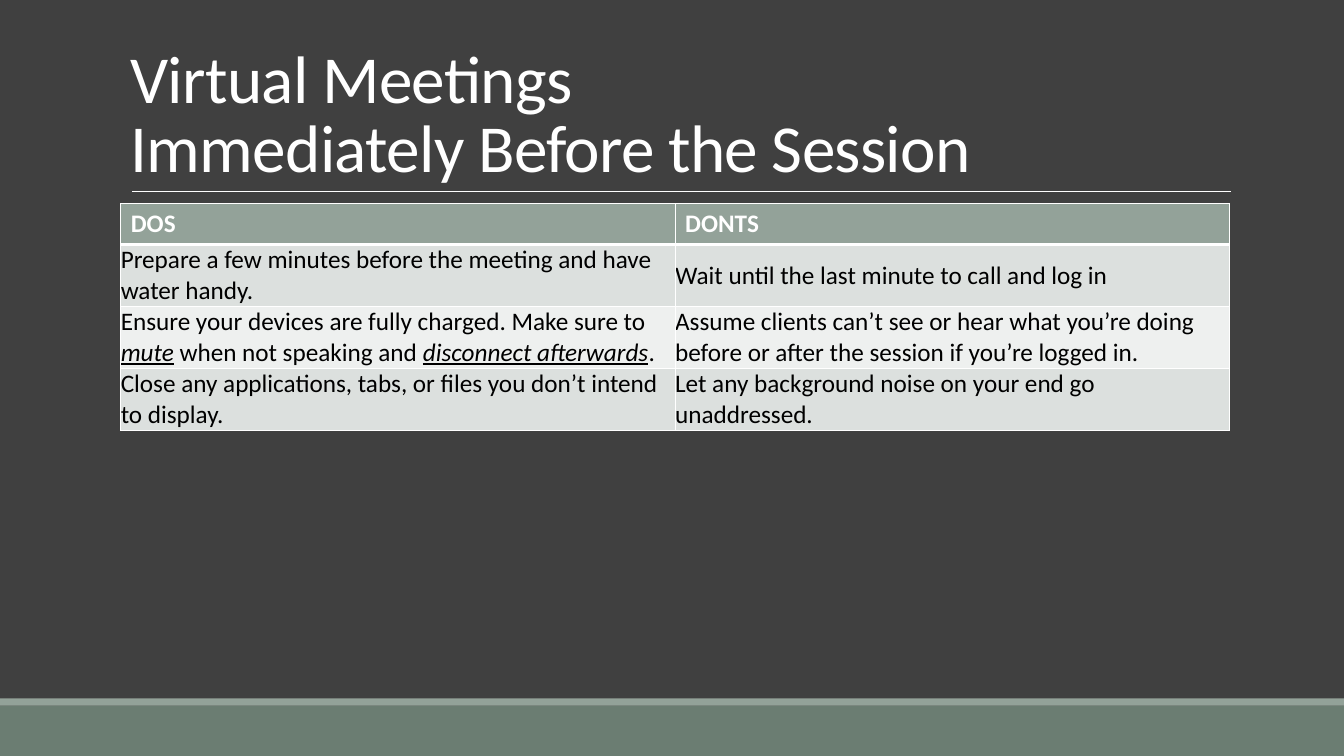
from lxml import etree
from pptx import Presentation
from pptx import util as u
from pptx.dml.color import RGBColor
from pptx.enum import shapes, text
from pptx.oxml import ns

PX = 9525  # EMU per px, 96 px to the inch
FONT = "Calibri"
CHARCOAL = RGBColor(0x40, 0x40, 0x40)
DARK_SAGE = RGBColor(0x6B, 0x7D, 0x72)
SAGE = RGBColor(0x93, 0xA2, 0x99)
BAND_DARK = RGBColor(0xDC, 0xE0, 0xDE)
BAND_LIGHT = RGBColor(0xEE, 0xF0, 0xEF)
WHITE = RGBColor(0xFF, 0xFF, 0xFF)
BLACK = RGBColor(0, 0, 0)

HEADER_HEIGHT, ROW_HEIGHT = 39, 59
# Words between underscores are italic and underlined
ADVICE = [
    ("DOS", "DONTS"),
    ("Prepare a few minutes before the meeting and have water handy.",
     "Wait until the last minute to call and log in"),
    ("Ensure your devices are fully charged. Make sure to _mute_ when not "
     "speaking and _disconnect afterwards_.",
     "Assume clients can’t see or hear what you’re doing before or after "
     "the session if you’re logged in."),
    ("Close any applications, tabs, or files you don’t intend to display.",
     "Let any background noise on your end go unaddressed."),
]


def emu(*lengths):
    return [u.Emu(length * PX) for length in lengths]


def style(run, size, color, bold=False):
    run.font.name = FONT
    run.font.size = u.Pt(size)
    run.font.color.rgb = color
    run.font.bold = bold


def add_footer(slide, left, top, width, height):
    """Dark band with a thin lighter strip along its top."""
    strip = 7
    for y, h, color in ((top + strip, height - strip, DARK_SAGE),
                        (top, strip, SAGE)):
        band = slide.shapes.add_shape(shapes.MSO_SHAPE.RECTANGLE,
                                      *emu(left, y, width, h))
        band.shadow.inherit = False
        band.fill.solid()
        band.fill.fore_color.rgb = color
        band.line.fill.background()


def add_title(slide, left, top, width, height):
    """Two-line heading with a rule under it."""
    inset = 11
    bottom = top + height
    rule = slide.shapes.add_connector(
        shapes.MSO_CONNECTOR.STRAIGHT,
        *emu(left + inset, bottom, left + width + 1, bottom))
    rule.line.color.rgb = WHITE
    rule.line.width = u.Pt(0.5)
    etree.SubElement(rule.element.spPr, ns.qn("a:effectLst"))

    heading = slide.shapes.add_textbox(*emu(left, top, width, height)).text_frame
    heading.word_wrap = True
    heading.vertical_anchor = text.MSO_ANCHOR.BOTTOM
    heading.text = "Virtual Meetings\vImmediately Before the Session"
    line = heading.paragraphs[0]
    line.line_spacing = 0.85
    for run in line.runs:
        style(run, 48, WHITE)
        run.font._element.set("spc", "-50")


def set_borders(cell, bottom_width):
    props = cell._tc.get_or_add_tcPr()
    sides = (("L", 1), ("R", 1), ("T", 1), ("B", bottom_width))
    for position, (side, width) in enumerate(sides):
        border = etree.Element(ns.qn(f"a:ln{side}"), w=str(u.Pt(width)))
        fill = etree.SubElement(border, ns.qn("a:solidFill"))
        etree.SubElement(fill, ns.qn("a:srgbClr"), val=str(WHITE))
        props.insert(position, border)


def fill_cell(cell, wording, row):
    is_header = row == 0
    cell.fill.solid()
    if is_header:
        cell.fill.fore_color.rgb = SAGE
    else:
        cell.fill.fore_color.rgb = BAND_DARK if row % 2 else BAND_LIGHT
        cell.vertical_anchor = text.MSO_ANCHOR.MIDDLE
        cell.margin_left = cell.margin_right = 0
        cell.margin_top = cell.margin_bottom = 0
    for index, part in enumerate(wording.split("_")):
        run = cell.text_frame.paragraphs[0].add_run()
        run.text = part
        style(run, 18, WHITE if is_header else BLACK, is_header)
        if index % 2:
            run.font.italic = run.font.underline = True
    set_borders(cell, 3 if is_header else 1)


def add_advice_table(slide, left, top, width):
    """Dos and don'ts side by side."""
    heights = [HEADER_HEIGHT] + [ROW_HEIGHT] * (len(ADVICE) - 1)
    table = slide.shapes.add_table(
        len(ADVICE), 2, *emu(left, top, width, sum(heights))).table
    for row, (wordings, height) in enumerate(zip(ADVICE, heights)):
        table.rows[row].height = u.Emu(height * PX)
        for column, wording in enumerate(wordings):
            fill_cell(table.cell(row, column), wording, row)


def main():
    deck = Presentation()
    deck.slide_width, deck.slide_height = emu(1280, 720)
    slide = deck.slides.add_slide(deck.slide_layouts[6])
    slide.background.fill.solid()
    slide.background.fill.fore_color.rgb = CHARCOAL

    add_footer(slide, 0, 665, 1280, 55)
    add_title(slide, 115, 30, 1056, 152)
    add_advice_table(slide, 115, 194, 1056)
    deck.save("out.pptx")


if __name__ == "__main__":
    main()
